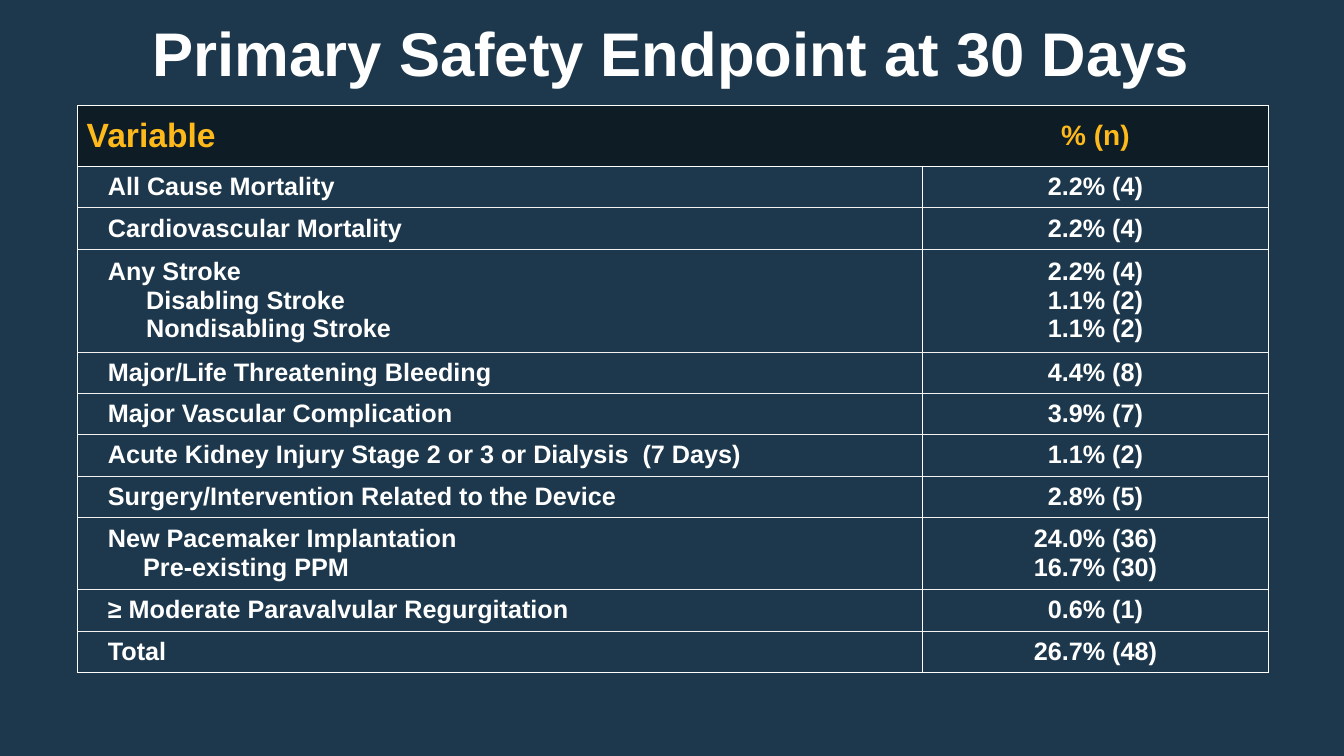
from lxml import etree
from pptx import Presentation
from pptx.dml.color import RGBColor
from pptx.enum.text import MSO_ANCHOR, PP_ALIGN
from pptx.oxml.ns import qn
from pptx.util import Inches, Pt

NAVY = RGBColor(0x1D, 0x38, 0x4C)
DARK_NAVY = RGBColor(0x0E, 0x1C, 0x26)
GOLD = RGBColor(0xFE, 0xB9, 0x1A)
WHITE = RGBColor(0xFF, 0xFF, 0xFF)
PALE_GREY = RGBColor(0xF2, 0xF2, 0xF2)

STRONG = (WHITE, 1)
THIN = (PALE_GREY, 0.25)

COLUMN_WIDTHS = (8.38, 3.43)
HEADER_HEIGHT = 0.6
ROW_HEIGHTS = {1: 0.41, 2: 0.72, 3: 1.02}
ENDPOINTS = [
    (["All Cause Mortality"], ["2.2% (4)"], 0),
    (["Cardiovascular Mortality"], ["2.2% (4)"], 0),
    (["Any Stroke", "Disabling Stroke", "Nondisabling Stroke"],
     ["2.2% (4)", "1.1% (2)", "1.1% (2)"], 0.38),
    (["Major/Life Threatening Bleeding"], ["4.4% (8)"], 0),
    (["Major Vascular Complication"], ["3.9% (7)"], 0),
    (["Acute Kidney Injury Stage 2 or 3 or Dialysis  (7 Days)"], ["1.1% (2)"], 0),
    (["Surgery/Intervention Related to the Device"], ["2.8% (5)"], 0),
    (["New Pacemaker Implantation", "Pre-existing PPM"],
     ["24.0% (36)", "16.7% (30)"], 0.35),
    (["≥ Moderate Paravalvular Regurgitation"], ["0.6% (1)"], 0),
    (["Total"], ["26.7% (48)"], 0),
]


def write_lines(frame, lines, size, color, alignment, sub_indent=0):
    for index, line in enumerate(lines):
        paragraph = frame.paragraphs[0] if index == 0 else frame.add_paragraph()
        paragraph.text = line
        paragraph.alignment = alignment
        if index and sub_indent:
            properties = paragraph._p.get_or_add_pPr()
            properties.set("marL", str(Inches(sub_indent)))
            properties.set("indent", "0")
        font = paragraph.font
        font.name = "Arial"
        font.size = Pt(size)
        font.bold = True
        font.color.rgb = color


def set_borders(cell, **borders):
    properties = cell._tc.get_or_add_tcPr()
    for position, side in enumerate("LRTB"):
        border = borders[side]
        line = etree.Element(qn(f"a:ln{side}"))
        if border is None:
            line.set("w", "0")
            etree.SubElement(line, qn("a:noFill"))
        else:
            color, width = border
            line.set("w", str(Pt(width)))
            fill = etree.SubElement(line, qn("a:solidFill"))
            etree.SubElement(fill, qn("a:srgbClr"), val=str(color))
        properties.insert(position, line)


def style_cell(cell, fill_color, left, right):
    cell.fill.solid()
    cell.fill.fore_color.rgb = fill_color
    cell.vertical_anchor = MSO_ANCHOR.MIDDLE
    cell.margin_left, cell.margin_right = Inches(left), Inches(right)
    cell.margin_top = cell.margin_bottom = Inches(0.05)


def add_title(slide, text):
    box = slide.shapes.add_textbox(Inches(1), Inches(0.1), Inches(11.33), Inches(0.83))
    frame = box.text_frame
    frame.word_wrap = True
    frame.vertical_anchor = MSO_ANCHOR.MIDDLE
    frame.margin_left = frame.margin_right = Inches(0.05)
    write_lines(frame, [text], 44, WHITE, PP_ALIGN.CENTER)


def fill_header(table):
    variable, rate = table.cell(0, 0), table.cell(0, 1)
    for cell in (variable, rate):
        style_cell(cell, DARK_NAVY, 0.09, 0.09)
    write_lines(variable.text_frame, ["Variable"], 24, GOLD, PP_ALIGN.LEFT)
    write_lines(rate.text_frame, ["% (n)"], 20, GOLD, PP_ALIGN.CENTER)
    set_borders(variable, L=STRONG, R=None, T=STRONG, B=STRONG)
    set_borders(rate, L=None, R=STRONG, T=STRONG, B=STRONG)


def fill_endpoint(table, row, names, rates, sub_indent):
    name_cell, rate_cell = table.cell(row, 0), table.cell(row, 1)
    style_cell(name_cell, NAVY, 0.3, 0.1)
    style_cell(rate_cell, NAVY, 0.1, 0.1)
    write_lines(name_cell.text_frame, names, 18, WHITE, PP_ALIGN.LEFT, sub_indent)
    write_lines(rate_cell.text_frame, rates, 18, WHITE, PP_ALIGN.CENTER)
    top = STRONG if row == 1 else THIN
    bottom = STRONG if row == len(ENDPOINTS) else THIN
    for cell in (name_cell, rate_cell):
        set_borders(cell, L=STRONG, R=STRONG, T=top, B=bottom)


def add_endpoint_table(slide):
    heights = [HEADER_HEIGHT] + [ROW_HEIGHTS[len(names)] for names, _, _ in ENDPOINTS]
    table = slide.shapes.add_table(
        len(heights), len(COLUMN_WIDTHS), Inches(0.77), Inches(1.05),
        Inches(sum(COLUMN_WIDTHS)), Inches(sum(heights))).table
    for column, width in zip(table.columns, COLUMN_WIDTHS):
        column.width = Inches(width)
    for row, height in zip(table.rows, heights):
        row.height = Inches(height)
    fill_header(table)
    for row, (names, rates, sub_indent) in enumerate(ENDPOINTS, start=1):
        fill_endpoint(table, row, names, rates, sub_indent)


def main():
    presentation = Presentation()
    presentation.slide_width = Inches(13.33)
    presentation.slide_height = Inches(7.5)
    slide = presentation.slides.add_slide(presentation.slide_layouts[6])
    slide.background.fill.solid()
    slide.background.fill.fore_color.rgb = NAVY
    add_title(slide, "Primary Safety Endpoint at 30 Days")
    add_endpoint_table(slide)
    presentation.save("out.pptx")


if __name__ == "__main__":
    main()
